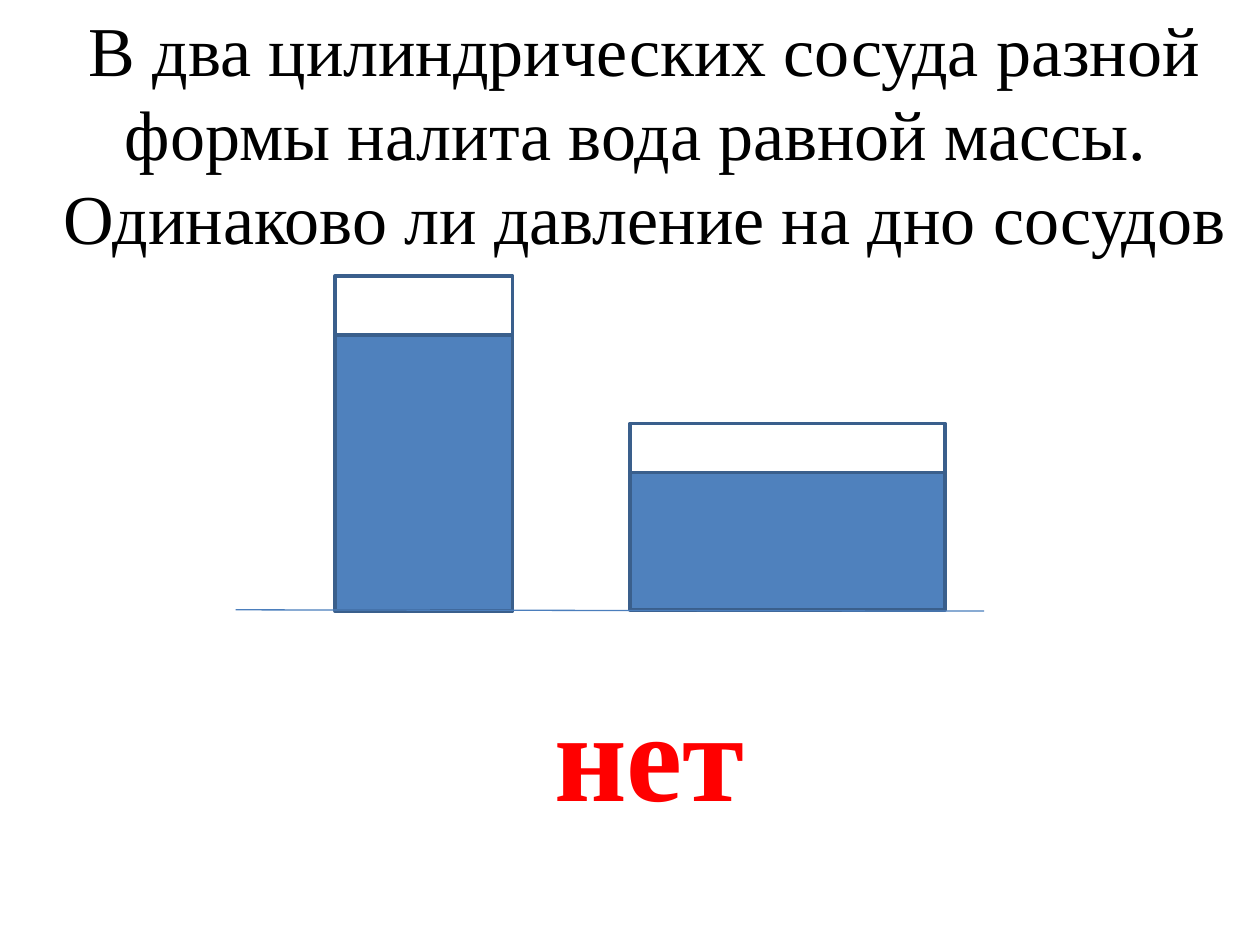
from dataclasses import dataclass

from lxml import etree
from pptx import Presentation
from pptx.dml.color import RGBColor
from pptx.enum import shapes, text
from pptx.oxml.ns import qn
from pptx.util import Inches, Pt


@dataclass(frozen=True)
class Theme:
    font: str = "Times New Roman"
    question_size: int = 40
    answer_size: int = 72
    question_color: str = "000000"
    answer_color: str = "FF0000"
    glass: str = "FFFFFF"
    water: str = "4F81BD"
    outline: str = "3A5F8C"
    table_line: str = "4B7EBC"
    outline_width: float = 2
    table_line_width: float = 0.75


THEME = Theme()


def add_text(slide, box, content, size, color, alignment, bold=False, wrap=True):
    frame = slide.shapes.add_textbox(*map(Inches, box)).text_frame
    frame.text = content
    frame.word_wrap = wrap
    frame.auto_size = text.MSO_AUTO_SIZE.SHAPE_TO_FIT_TEXT
    for paragraph in frame.paragraphs:
        paragraph.alignment = alignment
        for run in paragraph.runs:
            run.font.name = THEME.font
            run.font.size = Pt(size)
            run.font.bold = bold
            run.font.color.rgb = RGBColor.from_string(color)


def add_rectangle(parent, box, fill):
    shape = parent.shapes.add_shape(
        shapes.MSO_SHAPE.RECTANGLE, *map(Inches, box))
    shape.shadow.inherit = False
    shape.fill.solid()
    shape.fill.fore_color.rgb = RGBColor.from_string(fill)
    shape.line.color.rgb = RGBColor.from_string(THEME.outline)
    shape.line.width = Pt(THEME.outline_width)


def add_vessel(parent, left, rim, water_level, width, height):
    """Draw the glass, then water of the same size lowered to its level."""
    add_rectangle(parent, (left, rim, width, height), THEME.glass)
    add_rectangle(parent, (left, water_level, width, height), THEME.water)


def add_table_line(parent, start, end):
    line = parent.shapes.add_connector(
        shapes.MSO_CONNECTOR.STRAIGHT, *map(Inches, start + end))
    line.line.color.rgb = RGBColor.from_string(THEME.table_line)
    line.line.width = Pt(THEME.table_line_width)
    etree.SubElement(line._element.spPr, qn("a:effectLst"))


def main():
    presentation = Presentation()
    presentation.slide_width = Inches(10)
    presentation.slide_height = Inches(7.5)
    slide = presentation.slides.add_slide(presentation.slide_layouts[6])

    add_text(slide, (0.23, 0, 9.77, 2.12),
             "В два цилиндрических сосуда разной формы налита вода равной массы. \n"
             "Одинаково ли давление на дно сосудов",
             THEME.question_size, THEME.question_color, text.PP_ALIGN.CENTER)

    vessels = slide.shapes.add_group_shape()
    add_vessel(vessels, left=5, rim=3.36, water_level=3.75, width=2.5, height=1.09)
    add_vessel(vessels, left=2.66, rim=2.19, water_level=2.66, width=1.41, height=2.19)
    add_table_line(vessels, (1.87, 4.84), (7.81, 4.85))

    add_text(slide, (4.3, 5.31, 1.73, 1.31), "нет", THEME.answer_size,
             THEME.answer_color, text.PP_ALIGN.LEFT, bold=True, wrap=False)

    presentation.save("out.pptx")


if __name__ == "__main__":
    main()
